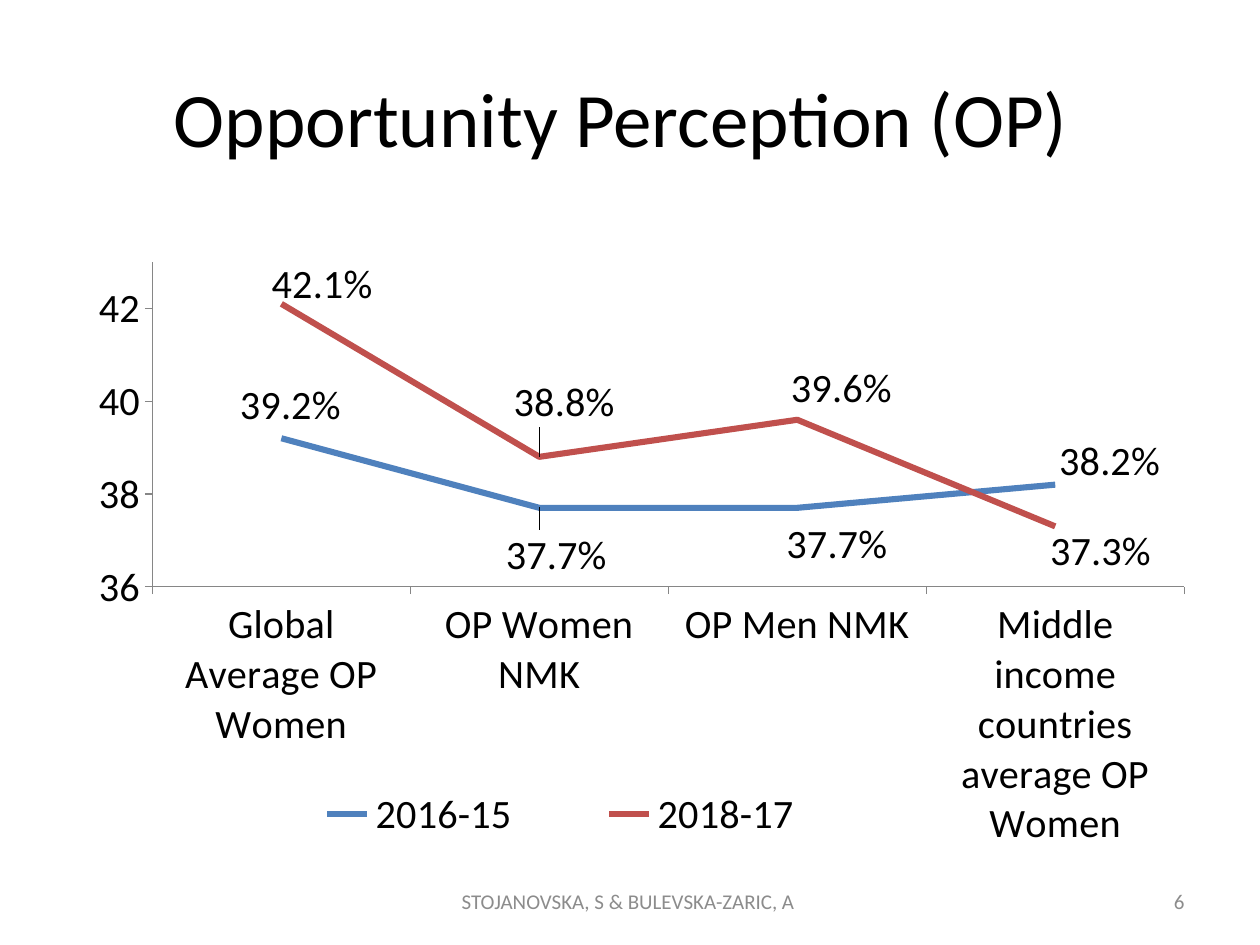
import pptx
import pptx.chart.data
import pptx.dml.color
import pptx.enum.chart
import pptx.enum.text
import pptx.oxml
import pptx.oxml.ns
import pptx.util

SCALE = 914400 // 126
FONT = "Calibri"
COLORS = {"text": "000000", "footer": "8C8C8C", "axis": "868686",
          "2016-15": "4F81BD", "2018-17": "C0504D"}
CHART_BOX = (73, 231, 1134, 624)
CATEGORIES = ["Global Average OP Women", "OP Women NMK", "OP Men NMK",
              "Middle income countries average OP Women"]
SERIES = {"2016-15": [39.2, 37.7, 37.7, 38.2],
          "2018-17": [42.1, 38.8, 39.6, 37.3]}
LABEL_SHIFTS = {"2016-15": [(-46, -34), (-38, 47), (-16, 36), (-1, -24)],
                "2018-17": [(-15, -20), (-31, -54), (-11, -32), (-10, 25)]}


def px(length):
    return pptx.util.Emu(length * SCALE)


def color(name):
    return pptx.dml.color.RGBColor.from_string(COLORS[name])


def set_font(font, size, name="text"):
    font.name = FONT
    font.size = pptx.util.Pt(size)
    font.bold = False
    font.color.rgb = color(name)


def place(shape, box):
    shape.left, shape.top, shape.width, shape.height = map(px, box)


def write(shape, text, size, name, alignment):
    frame = shape.text_frame
    frame.word_wrap = True
    frame.vertical_anchor = pptx.enum.text.MSO_ANCHOR.MIDDLE
    para = frame.paragraphs[0]
    para.text = text
    para.alignment = alignment
    for span in para.runs:
        set_font(span.font, size, name)


def add_text(page, box, text, alignment):
    shape = page.shapes.add_textbox(*map(px, box))
    write(shape, text, 12, "footer", alignment)


def make_layout(values, inner=False, edge=False):
    target = '<c:layoutTarget val="inner"/>' if inner else ""
    modes = "".join(f'<c:{side}Mode val="edge"/>' for side in "xy") if edge else ""
    sizes = "".join(f'<c:{key} val="{value:.2f}"/>' if edge else
                    f'<c:{key} val="{value:.3f}"/>'
                    for key, value in zip("xywh", values))
    return pptx.oxml.parse_xml(
        f'<c:layout {pptx.oxml.ns.nsdecls("c")}><c:manualLayout>'
        f'{target}{modes}{sizes}</c:manualLayout></c:layout>')


def fraction(box):
    width, height = CHART_BOX[2:]
    return [length / (width, height)[index % 2] for index, length in enumerate(box)]


def style_axis(axis):
    axis.has_major_gridlines = False
    axis.major_tick_mark = pptx.enum.chart.XL_TICK_MARK.OUTSIDE
    axis.minor_tick_mark = pptx.enum.chart.XL_TICK_MARK.NONE
    axis.format.line.color.rgb = color("axis")
    axis.format.line.width = pptx.util.Pt(0.75)
    set_font(axis.tick_labels.font, 23)


def style_series(series):
    series.smooth = False
    series.marker.style = pptx.enum.chart.XL_MARKER_STYLE.NONE
    series.format.line.color.rgb = color(series.name)
    series.format.line.width = pptx.util.Pt(3.5)
    for index, (value, shift) in enumerate(zip(series.values, LABEL_SHIFTS[series.name])):
        label = series.points[index].data_label
        para = label.text_frame.paragraphs[0]
        para.text = f"{value}%"
        set_font(para.runs[0].font, 23)
        label.position = pptx.enum.chart.XL_LABEL_POSITION.RIGHT
        element = series.data_labels._element.findall(pptx.oxml.ns.qn("c:dLbl"))[index]
        element.insert(1, make_layout(fraction(shift)))
    series.data_labels.show_value = True
    set_font(series.data_labels.font, 23)


def replace_layout(element, layout, position):
    for old in element.findall(pptx.oxml.ns.qn("c:layout")):
        element.remove(old)
    element.insert(position, layout)


def add_line_chart(page):
    data = pptx.chart.data.CategoryChartData()
    data.categories = CATEGORIES
    for name, values in SERIES.items():
        data.add_series(name, values)
    chart = page.shapes.add_chart(
        pptx.enum.chart.XL_CHART_TYPE.LINE, *map(px, CHART_BOX), data).chart
    chart.has_title = False
    set_font(chart.font, 23)
    chart.plots[0].vary_by_categories = False
    style_axis(chart.category_axis)
    style_axis(chart.value_axis)
    chart.value_axis.minimum_scale = 36
    chart.value_axis.maximum_scale = 43
    chart.value_axis.major_unit = 2
    for series in chart.plots[0].series:
        style_series(series)
    chart.has_legend = True
    chart.legend.position = pptx.enum.chart.XL_LEGEND_POSITION.RIGHT
    chart.legend.include_in_layout = False
    set_font(chart.legend.font, 23)
    plot_area = chart._chartSpace.chart.plotArea
    replace_layout(plot_area, make_layout(fraction((79, 29, 1032, 327)), True, True), 0)
    replace_layout(chart.legend._element,
                   make_layout(fraction((170, 555, 640, 56)), edge=True), 1)


def main():
    deck = pptx.Presentation()
    deck.slide_width, deck.slide_height = px(1260), px(945)
    page = deck.slides.add_slide(deck.slide_layouts[5])
    align = pptx.enum.text.PP_ALIGN
    title = page.shapes.title
    place(title, (63, 38, 1134, 157))
    write(title, "Opportunity Perception (OP) ", 44, "text", align.CENTER)
    add_line_chart(page)
    add_text(page, (431, 876, 399, 50), "STOJANOVSKA, S & BULEVSKA-ZARIC, A ", align.CENTER)
    add_text(page, (903, 876, 294, 50), "6", align.RIGHT)
    deck.save("out.pptx")


if __name__ == "__main__":
    main()
